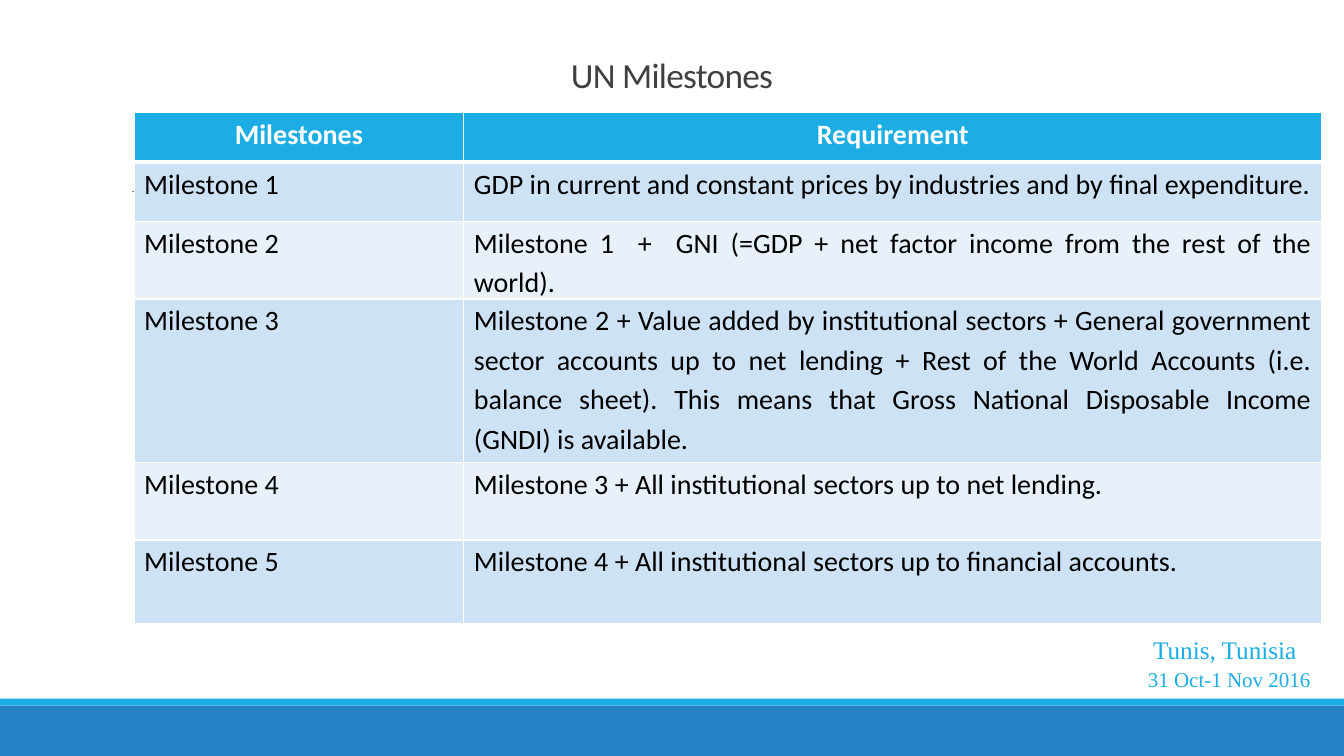
from dataclasses import dataclass

from lxml.etree import SubElement
from pptx import Presentation
from pptx.dml.color import RGBColor
from pptx.enum.shapes import MSO_CONNECTOR, MSO_SHAPE
from pptx.enum.text import MSO_ANCHOR, MSO_AUTO_SIZE, PP_ALIGN
from pptx.oxml.ns import qn
from pptx.util import Inches, Pt

COLORS = {
    "blue": "2683C6", "cyan": "1CADE4", "rule": "808080", "title": "404040",
    "white": "FFFFFF", "black": "000000", "odd": "CDE3F5", "even": "E8F1FA",
}
WIDTH, HEIGHT = Inches(13.333), Inches(7.5)


@dataclass(frozen=True)
class Box:
    """A rectangle in percent of the slide's width and height."""
    left: float
    top: float
    width: float
    height: float

    def emu(self) -> tuple[int, int, int, int]:
        return across(self.left), down(self.top), across(self.width), down(self.height)


@dataclass(frozen=True)
class Band:
    box: Box
    color: str


@dataclass(frozen=True)
class Label:
    text: str
    box: Box
    size: float


@dataclass(frozen=True)
class Row:
    milestone: str
    requirement: str
    height: float


BANDS = [
    Band(Box(0, 93.33, 100, 6.67), "blue"),
    Band(Box(0, 92.4, 100, 0.93), "cyan"),
]
LABELS = [
    Label("Tunis, Tunisia", Box(84.98, 83.2, 12.3, 5.33), 18),
    Label("31 Oct-1 Nov 2016", Box(84.6, 87.47, 13.73, 4.67), 15),
]
COLUMNS = [24.53, 63.82]
ROWS = [
    Row("Milestones", "Requirement", 6.53),
    Row("Milestone 1", "GDP in current and constant prices by industries and by "
        "final expenditure.", 7.87),
    Row("Milestone 2", "Milestone 1  +  GNI (=GDP + net factor income from the rest "
        "of the world). ", 10.13),
    Row("Milestone 3", "Milestone 2 + Value added by institutional sectors + General "
        "government sector accounts up to net lending + Rest of the World Accounts "
        "(i.e. balance sheet). This means that Gross National Disposable Income "
        "(GNDI) is available.", 21.6),
    Row("Milestone 4", "Milestone 3 + All institutional sectors up to net lending.", 10.27),
    Row("Milestone 5", "Milestone 4 + All institutional sectors up to financial "
        "accounts.", 11.07),
]
TABLE = Box(9.98, 14.93, sum(COLUMNS), sum(row.height for row in ROWS))


def across(percent: float) -> int:
    return round(WIDTH * percent / 100)


def down(percent: float) -> int:
    return round(HEIGHT * percent / 100)


def rgb(name: str) -> RGBColor:
    return RGBColor.from_string(COLORS[name])


def style(p, size: float, face: str, color: str, align, bold: bool = False) -> None:
    p.alignment = align
    for r in p.runs:
        r.font.size, r.font.name, r.font.bold = Pt(size), face, bold
        r.font.color.rgb = rgb(color)


def add_band(s, band: Band) -> None:
    sp = s.shapes.add_shape(MSO_SHAPE.RECTANGLE, *band.box.emu())
    sp.shadow.inherit = False
    sp.fill.solid()
    sp.fill.fore_color.rgb = rgb(band.color)
    sp.line.fill.background()


def add_rule(s, start: float, end: float, y: float) -> None:
    line = s.shapes.add_connector(
        MSO_CONNECTOR.STRAIGHT, across(start), down(y), across(end), down(y))
    line.line.color.rgb = rgb("rule")
    line.line.width = Pt(0.5)
    SubElement(line._element.spPr, qn("a:effectLst"))


def add_label(s, label: Label) -> None:
    tf = s.shapes.add_textbox(*label.box.emu()).text_frame
    tf.word_wrap = False
    tf.auto_size = MSO_AUTO_SIZE.SHAPE_TO_FIT_TEXT
    tf.text = label.text
    style(tf.paragraphs[0], label.size, "Times New Roman", "cyan", PP_ALIGN.CENTER)


def set_title(s, text: str, box: Box) -> None:
    title = s.shapes.title
    title.left, title.top, title.width, title.height = box.emu()
    tf = title.text_frame
    tf.text = text
    tf.word_wrap = True
    tf.auto_size = MSO_AUTO_SIZE.NONE
    tf.vertical_anchor = MSO_ANCHOR.BOTTOM
    p = tf.paragraphs[0]
    p.line_spacing = 0.85
    style(p, 25.2, "Calibri", "title", PP_ALIGN.CENTER)
    p.runs[0].font._element.set("spc", "-50")


def add_borders(cell, bottom: float) -> None:
    tc_pr = cell._tc.get_or_add_tcPr()
    for side, width in (("L", 1), ("R", 1), ("T", 1), ("B", bottom)):
        line = SubElement(tc_pr, qn(f"a:ln{side}"), w=str(Pt(width)))
        fill = SubElement(line, qn("a:solidFill"))
        SubElement(fill, qn("a:srgbClr"), val=COLORS["white"])


def fill_cell(cell, text: str, row: int) -> None:
    header = row == 0
    cell.margin_left = cell.margin_right = Inches(0.1)
    cell.margin_top = cell.margin_bottom = 0
    add_borders(cell, 3 if header else 1)
    cell.fill.solid()
    cell.fill.fore_color.rgb = rgb("cyan" if header else "odd" if row % 2 else "even")
    cell.text_frame.text = text
    p = cell.text_frame.paragraphs[0]
    p.line_spacing = 1.15
    style(p, 20, "Calibri", "white" if header else "black",
          PP_ALIGN.CENTER if header else PP_ALIGN.JUSTIFY, header)


def add_milestones(s) -> None:
    table = s.shapes.add_table(len(ROWS), len(COLUMNS), *TABLE.emu()).table
    for column, width in zip(table.columns, COLUMNS):
        column.width = across(width)
    for i, row in enumerate(ROWS):
        table.rows[i].height = down(row.height)
        for j, text in enumerate((row.milestone, row.requirement)):
            fill_cell(table.cell(i, j), text, i)


def main() -> None:
    prs = Presentation()
    prs.slide_width, prs.slide_height = WIDTH, HEIGHT
    s = prs.slides.add_slide(prs.slide_layouts[5])

    # Footer bands, rule, place and date
    for band in BANDS:
        add_band(s, band)
    add_rule(s, 9.83, 91.58, 25.33)
    for label in LABELS:
        add_label(s, label)

    # Title and table
    set_title(s, "UN Milestones", Box(5, 4, 90, 9.33))
    add_milestones(s)
    prs.save("out.pptx")


if __name__ == "__main__":
    main()
